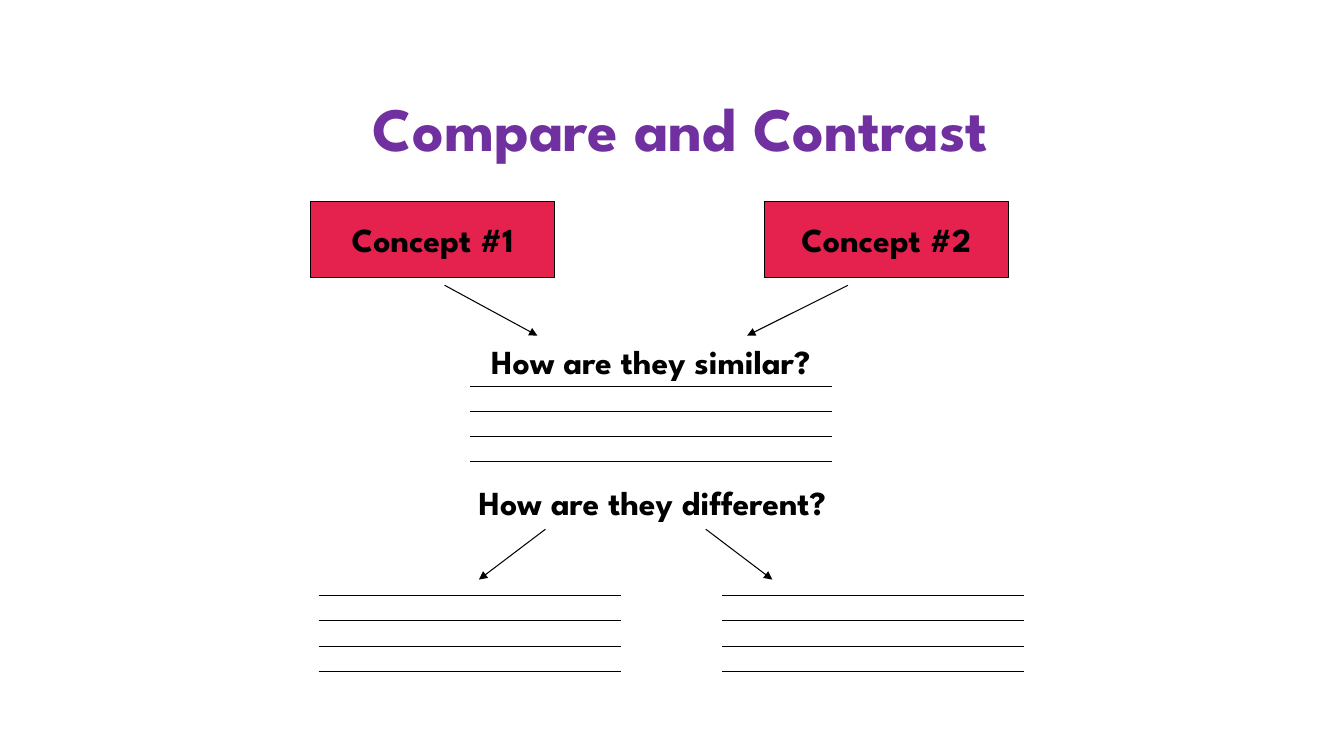
import dataclasses
import typing

import pptx
import pptx.dml.color
import pptx.enum.shapes
import pptx.enum.text
import pptx.oxml
import pptx.oxml.ns
import pptx.util

Inches = pptx.util.Inches


@dataclasses.dataclass(frozen=True)
class Theme:
    font: str = "League Spartan"
    title: str = "7030A0"
    ink: str = "000000"
    box: str = "E5224E"
    paper: str = "FFFFFF"
    large: float = 44
    small: float = 24
    stroke: float = 0.75


class Label(typing.NamedTuple):
    text: str
    left: float
    top: float
    width: float
    height: float


class Arrow(typing.NamedTuple):
    x1: float
    y1: float
    x2: float
    y2: float


class Lines(typing.NamedTuple):
    left: float
    top: float
    width: float


THEME = Theme()
HEADING = Label("Compare and Contrast", 2.5, 0.63, 8.5, 1.25)
BOXES = [Label(f"Concept #{i + 1}", 3.08 + 4.5 * i, 2, 2.42, 0.75) for i in range(2)]
PROMPTS = [
    Label("How are they similar?", 4.37, 3.33, 4.17, 0.5),
    Label("How are they different?", 4.21, 4.73, 4.52, 0.5),
]
ARROWS = [
    Arrow(4.41, 2.83, 5.33, 3.33),
    Arrow(8.41, 2.83, 7.41, 3.33),
    Arrow(5.41, 5.25, 4.75, 5.75),
    Arrow(7, 5.25, 7.66, 5.75),
]
BLANKS = [Lines(4.66, 3.83, 3.59), Lines(3.16, 5.91, 3), Lines(7.16, 5.91, 3)]
ROWS = 4
ROW_GAP = 0.25


def paint(code: str) -> pptx.dml.color.RGBColor:
    return pptx.dml.color.RGBColor.from_string(code)


def place(label: Label) -> list[int]:
    return [Inches(n) for n in label[1:]]


def write(shape, text: str, *, size: float = THEME.small, color: str = THEME.ink,
          middle: bool = False, wrap: bool = True, grow: bool = False) -> None:
    anchor = pptx.enum.text.MSO_ANCHOR
    fit = pptx.enum.text.MSO_AUTO_SIZE
    frame = shape.text_frame
    frame.text = text
    frame.word_wrap = wrap
    frame.auto_size = fit.SHAPE_TO_FIT_TEXT if grow else fit.NONE
    frame.vertical_anchor = anchor.MIDDLE if middle else anchor.TOP
    line = frame.paragraphs[0]
    line.alignment = pptx.enum.text.PP_ALIGN.CENTER
    font = line.runs[0].font
    font.name = THEME.font
    font.size = pptx.util.Pt(size)
    font.bold = True
    font.color.rgb = paint(color)


def outline(shape) -> None:
    shape.line.color.rgb = paint(THEME.ink)
    shape.line.width = pptx.util.Pt(THEME.stroke)


def draw_title(slide, label: Label) -> None:
    title = slide.shapes.title
    title.left, title.top, title.width, title.height = place(label)
    write(title, label.text, size=THEME.large, color=THEME.title, middle=True)


def draw_box(slide, label: Label) -> None:
    box = slide.shapes.add_shape(pptx.enum.shapes.MSO_SHAPE.RECTANGLE, *place(label))
    box.shadow.inherit = False
    box.fill.solid()
    box.fill.fore_color.rgb = paint(THEME.box)
    outline(box)
    write(box, label.text, middle=True, wrap=False)


def draw_prompt(slide, label: Label) -> None:
    write(slide.shapes.add_textbox(*place(label)), label.text, grow=True)


def draw_line(shapes, ends: Arrow, head: bool = False) -> None:
    line = shapes.add_connector(
        pptx.enum.shapes.MSO_CONNECTOR.STRAIGHT, *[Inches(n) for n in ends])
    outline(line)
    if head:
        tip = pptx.oxml.parse_xml(
            f'<a:tailEnd {pptx.oxml.ns.nsdecls("a")} type="triangle"/>')
        line.line._get_or_add_ln().append(tip)
    line._element.spPr.append(
        pptx.oxml.parse_xml(f'<a:effectLst {pptx.oxml.ns.nsdecls("a")}/>'))


def draw_blanks(slide, block: Lines) -> None:
    group = slide.shapes.add_group_shape()
    for row in range(ROWS):
        y = block.top + row * ROW_GAP
        draw_line(group.shapes, Arrow(block.left, y, block.left + block.width, y))


def main() -> None:
    deck = pptx.Presentation()
    deck.slide_width, deck.slide_height = Inches(13.33), Inches(7.5)
    slide = deck.slides.add_slide(deck.slide_layouts.get_by_name("Title Only"))
    slide.background.fill.solid()
    slide.background.fill.fore_color.rgb = paint(THEME.paper)
    draw_title(slide, HEADING)
    for label in BOXES:
        draw_box(slide, label)
    for label in PROMPTS:
        draw_prompt(slide, label)
    for arrow in ARROWS:
        draw_line(slide.shapes, arrow, head=True)
    for block in BLANKS:
        draw_blanks(slide, block)
    deck.save("out.pptx")


if __name__ == "__main__":
    main()
